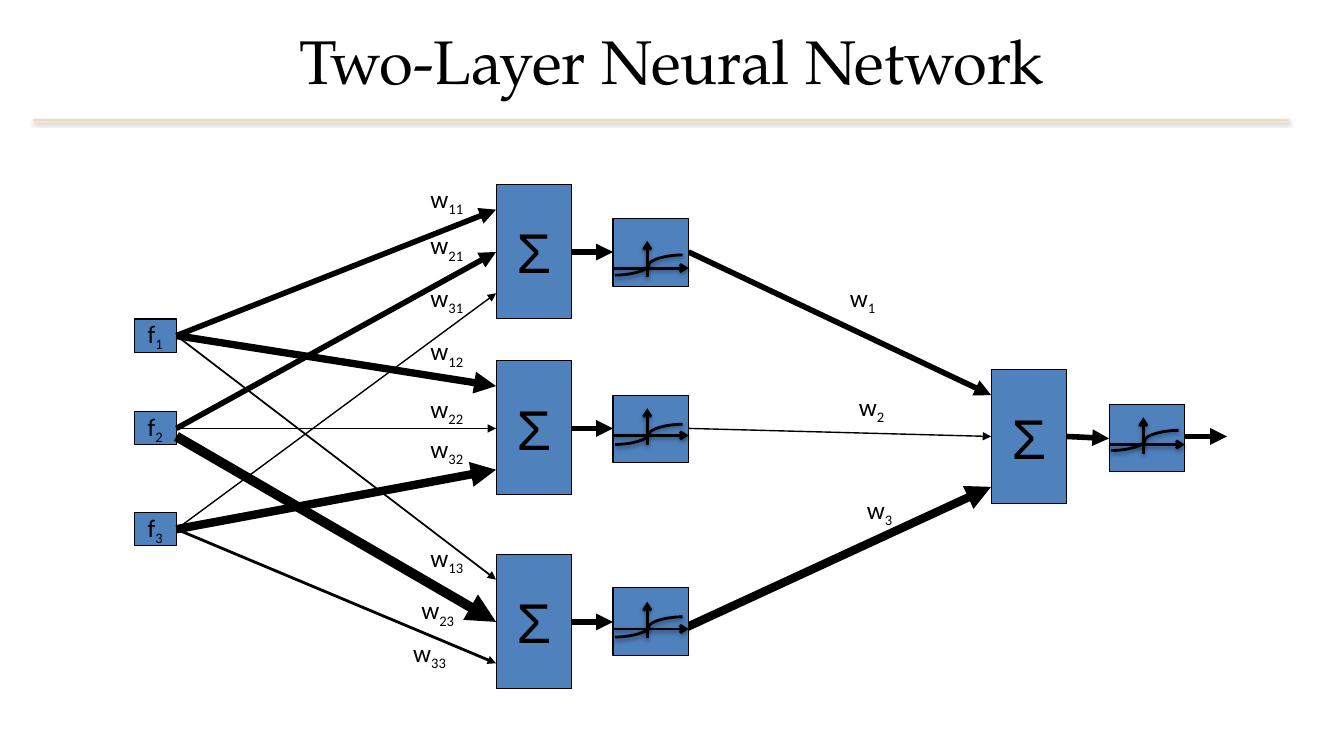
"""Build a slide showing a two-layer neural network."""
from collections import namedtuple

from pptx import Presentation
from pptx.dml.color import RGBColor
from pptx.enum.shapes import MSO_CONNECTOR as Route, MSO_SHAPE as Shape
from pptx.enum.text import MSO_ANCHOR as Anchor, PP_ALIGN as Align
from pptx.oxml.ns import qn
from pptx.oxml.xmlchemy import OxmlElement
from pptx.util import Inches, Pt

BLACK = RGBColor(0x00, 0x00, 0x00)
BLUE = RGBColor(0x4F, 0x81, 0xBD)
PEACH = RGBColor(0xFC, 0xD5, 0xB5)

FEATURE_LEFT, FEATURE_WIDTH, FEATURE_HEIGHT = 1.33, 0.42, 0.33
SUM_WIDTH, SUM_HEIGHT = 0.75, 1.33
CELL_WIDTH, CELL_HEIGHT = 0.75, 0.67
HIDDEN_LEFT, HIDDEN_CELL_LEFT = 4.92, 6.08
OUTPUT_LEFT, OUTPUT_CELL_LEFT = 9.83, 11
INPUT_OFFSETS = (0.25, 0.67, 1.08)
FEATURE_CENTERS = (3.33, 4.25, 5.25)

Weight = namedtuple("Weight", "start_y width label_left label_top")
Neuron = namedtuple("Neuron", "top cell_top axis_y curve_top weights")
OutputWeight = namedtuple("OutputWeight", "start end width label_left label_top")

HIDDEN = (
    Neuron(1.83, 2.17, 2.66, 2.53, (
        Weight(3.33, 4, 4.17, 1.77),
        Weight(4.25, 4, 4.17, 2.23),
        Weight(5.25, 1, 4.17, 2.75))),
    Neuron(3.58, 3.92, 4.32, 4.21, (
        Weight(3.33, 5.25, 4.17, 3.28),
        Weight(4.25, 1, 4.17, 3.85),
        Weight(5.25, 6, 4.17, 4.25))),
    Neuron(5.5, 5.83, 6.24, 6.12, (
        Weight(3.33, 1.25, 4.17, 5.33),
        Weight(4.33, 7, 4.08, 5.85),
        Weight(5.25, 2, 4, 6.27))),
)
OUTPUT = Neuron(3.67, 4.01, 4.41, 4.27, ())
OUTPUT_WEIGHTS = (
    OutputWeight((6.83, 2.5), (OUTPUT_LEFT, 3.92), 4, 8.33, 2.75),
    OutputWeight((6.83, 4.25), (OUTPUT_LEFT, 4.33), 1, 8.42, 3.83),
    OutputWeight((6.75, 6.25), (OUTPUT_LEFT, 4.83), 6, 8.5, 4.85),
)


def add_child(parent, tag, **attributes):
    child = OxmlElement(tag)
    for name, value in attributes.items():
        child.set(name, value)
    parent.append(child)
    return child


def add_line(page, start, end, width, head=None, color=BLACK, shadow=False,
             route=Route.STRAIGHT):
    line = page.shapes.add_connector(route, *map(Inches, start + end))
    line.line.color.rgb = color
    line.line.width = Pt(width)
    properties = line._element.spPr
    if head:
        add_child(properties.find(qn("a:ln")), "a:tailEnd", type=head)
    effects = add_child(properties, "a:effectLst")
    if shadow:
        outer = add_child(effects, "a:outerShdw", blurRad="40000", dist="20000",
                          dir="5400000", rotWithShape="0")
        tint = add_child(outer, "a:srgbClr", val="000000")
        add_child(tint, "a:alpha", val="38000")


def add_arrow(page, start, end, width=4):
    add_line(page, start, end, width, head="triangle")


def write_text(frame, text, subscript="", size=18, font="Calibri", align=Align.LEFT):
    para = frame.paragraphs[0]
    para.alignment = align
    para.font.size = Pt(size)
    para.font.name = font
    para.font.color.rgb = BLACK
    para.add_run().text = text
    if subscript:
        span = para.add_run()
        span.text = subscript
        span._r.get_or_add_rPr().set("baseline", "-25000")


def add_box(page, left, top, width, height):
    box = page.shapes.add_shape(Shape.RECTANGLE, *map(Inches, (left, top, width, height)))
    box.shadow.inherit = False
    box.fill.solid()
    box.fill.fore_color.rgb = BLUE
    box.line.color.rgb = BLACK
    box.line.width = Pt(0.75)
    box.text_frame.word_wrap = False
    box.text_frame.vertical_anchor = Anchor.MIDDLE
    return box


def add_weight_label(page, left, top, subscript):
    label = page.shapes.add_textbox(*map(Inches, (left, top, 0.58, 0.44)))
    label.text_frame.word_wrap = True
    write_text(label.text_frame, "w", subscript)


def add_sum(page, left, top):
    box = add_box(page, left, top, SUM_WIDTH, SUM_HEIGHT)
    write_text(box.text_frame, "Σ", size=40, font="Arial", align=Align.CENTER)


def add_activation(page, left, neuron):
    add_box(page, left, neuron.cell_top, CELL_WIDTH, CELL_HEIGHT)
    axis_y, middle = neuron.axis_y, left + 0.34
    add_line(page, (left, axis_y), (left + CELL_WIDTH, axis_y), 2, "arrow", shadow=True)
    add_line(page, (middle, axis_y + 0.09), (middle, axis_y - 0.27), 2, "arrow",
             shadow=True)
    add_line(page, (left + 0.02, neuron.curve_top + 0.2),
             (left + 0.69, neuron.curve_top), 2, shadow=True, route=Route.CURVE)


def add_features(page):
    for number, center in enumerate(FEATURE_CENTERS, 1):
        box = add_box(page, FEATURE_LEFT, center - FEATURE_HEIGHT / 2,
                      FEATURE_WIDTH, FEATURE_HEIGHT)
        write_text(box.text_frame, "f", str(number), align=Align.CENTER)


def add_hidden_neuron(page, number, neuron):
    add_sum(page, HIDDEN_LEFT, neuron.top)
    for source, (weight, offset) in enumerate(zip(neuron.weights, INPUT_OFFSETS), 1):
        add_arrow(page, (FEATURE_LEFT + FEATURE_WIDTH, weight.start_y),
                  (HIDDEN_LEFT, neuron.top + offset), weight.width)
        add_weight_label(page, weight.label_left, weight.label_top, f"{source}{number}")
    center = neuron.top + INPUT_OFFSETS[1]
    add_arrow(page, (HIDDEN_LEFT + SUM_WIDTH, center), (HIDDEN_CELL_LEFT, center))
    add_activation(page, HIDDEN_CELL_LEFT, neuron)


def add_output_neuron(page):
    add_sum(page, OUTPUT_LEFT, OUTPUT.top)
    for number, weight in enumerate(OUTPUT_WEIGHTS, 1):
        add_weight_label(page, weight.label_left, weight.label_top, str(number))
    add_activation(page, OUTPUT_CELL_LEFT, OUTPUT)
    add_arrow(page, (OUTPUT_LEFT + SUM_WIDTH, 4.33), (OUTPUT_CELL_LEFT, 4.35))
    add_arrow(page, (OUTPUT_CELL_LEFT + CELL_WIDTH, 4.33), (12.17, 4.33))


def set_title(page, text):
    title = page.shapes.title
    title.left, title.top, title.width, title.height = map(
        Inches, (0, -0.03, 13.33, 1.25))
    title.text_frame.vertical_anchor = Anchor.MIDDLE
    write_text(title.text_frame, text, size=44, font="TeX Gyre Pagella",
               align=Align.CENTER)


def main():
    deck = Presentation()
    deck.slide_width, deck.slide_height = Inches(13.33), Inches(7.5)
    page = deck.slides.add_slide(deck.slide_layouts[5])
    set_title(page, "Two-Layer Neural Network")
    add_line(page, (0.33, 1.19), (12.78, 1.19), 1, color=PEACH, shadow=True)
    for weight in OUTPUT_WEIGHTS:
        add_arrow(page, weight.start, weight.end, weight.width)
    add_features(page)
    for number, neuron in enumerate(HIDDEN, 1):
        add_hidden_neuron(page, number, neuron)
    add_output_neuron(page)
    deck.save("out.pptx")


if __name__ == "__main__":
    main()
